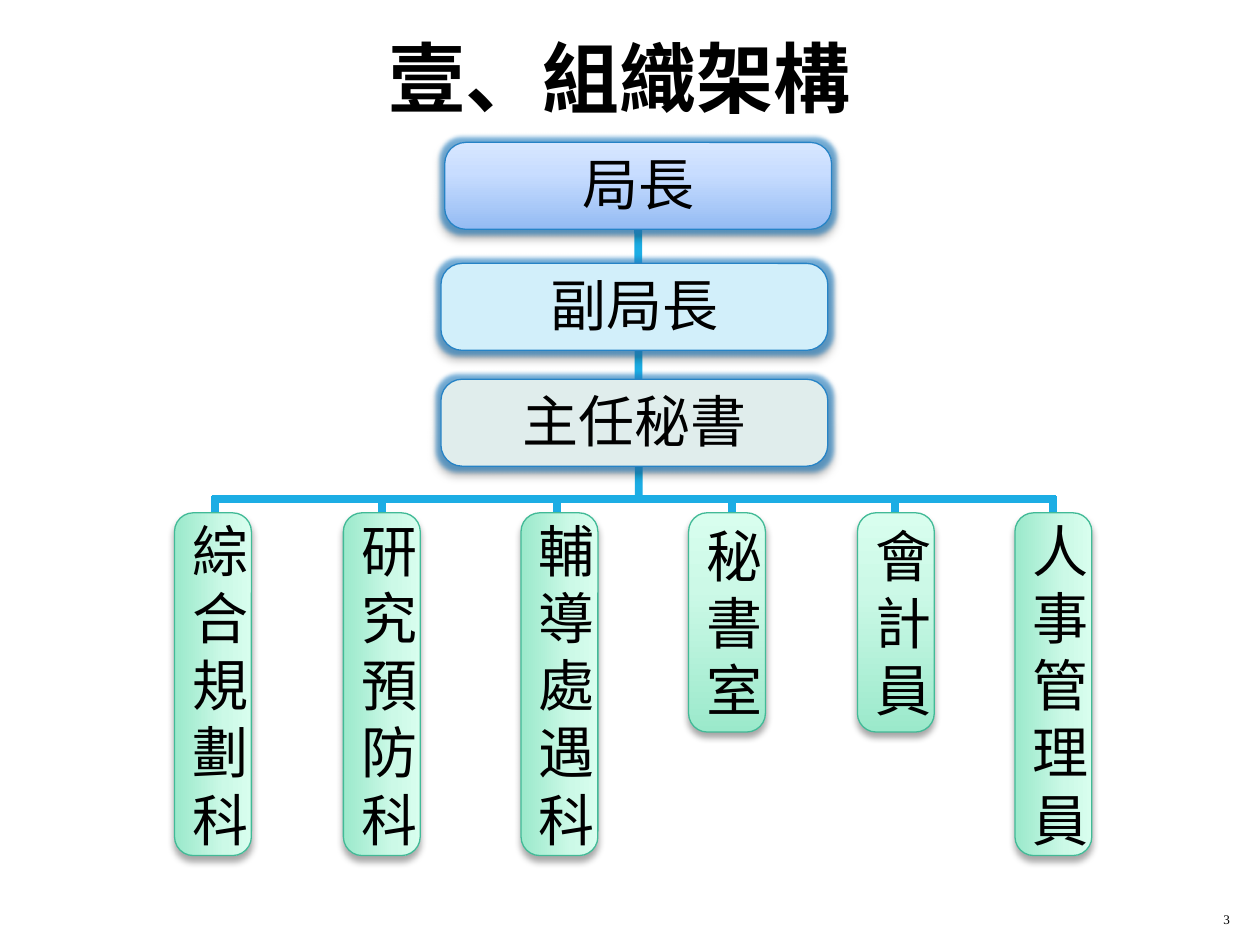
import pptx
import pptx.dml.color
import pptx.enum.shapes
import pptx.enum.text
import pptx.oxml
import pptx.oxml.ns
import pptx.util
from pptx.util import Inches, Pt

RGBColor = pptx.dml.color.RGBColor
ANCHOR = pptx.enum.text.MSO_ANCHOR
ALIGN = pptx.enum.text.PP_ALIGN

BLACK = RGBColor(0x00, 0x00, 0x00)
CYAN = RGBColor(0x1C, 0xAD, 0xE4)
BLUE = RGBColor(0x26, 0x83, 0xC6)
GREEN = RGBColor(0x42, 0xBA, 0x97)
PALE_CYAN = RGBColor(0xD2, 0xEF, 0xFA)
PALE_GREY = RGBColor(0xE0, 0xED, 0xEC)
BLUE_FADE = [(0, RGBColor(0x94, 0xBB, 0xF3)), (65, RGBColor(0xC8, 0xDD, 0xFF)),
             (100, RGBColor(0xD8, 0xE7, 0xFF))]
GREEN_FADE = [(0, RGBColor(0x9B, 0xE9, 0xCB)), (65, RGBColor(0xCC, 0xF9, 0xE7)),
              (100, RGBColor(0xD8, 0xFE, 0xEE))]

TITLE = "壹、組織架構"
PAGE_NUMBER = "3"
# name, left, top, fill
LEADERS = [
    ("局長", 3.53, 1.13, BLUE_FADE),
    ("副局長", 3.5, 2.09, PALE_CYAN),
    ("主任秘書", 3.5, 3.01, PALE_GREY),
]
# name, centre of the box, centre of its drop line
UNITS = [
    ("綜合規劃科", 1.69, 1.71),
    ("研究預防科", 3.03, 3.03),
    ("輔導處遇科", 4.44, 4.42),
    ("秘書室", 5.77, 5.81),
    ("會計員", 7.11, 7.1),
    ("人事管理員", 8.36, 8.36),
]
LEADER_SIZE = (3.07, 0.69)
UNIT_TOP, UNIT_WIDTH = 4.07, 0.61
SHORT_UNIT, LONG_UNIT = 1.74, 2.72
BAR_Y, BAR_LEFT, BAR_RIGHT = 3.96, 1.68, 8.38
DROP_TOP, DROP_LENGTH = 3.94, 0.34
TRUNK_X = 5.07

NS = pptx.oxml.ns.nsdecls("a")


def write(shape, text, size=32, bold=False, align=ALIGN.CENTER, anchor=ANCHOR.MIDDLE):
    frame = shape.text_frame
    frame.word_wrap = True
    frame.vertical_anchor = anchor
    paragraph = frame.paragraphs[0]
    paragraph.alignment = align
    run = paragraph.add_run()
    run.text = text
    run.font.name = "Times New Roman"
    run.font.size = Pt(size)
    run.font.bold = bold
    run.font.color.rgb = BLACK


def add_effects(shape, glow=None):
    """Give a soft shadow below the shape and, if a colour is given, a glow."""
    halo = ""
    if glow is not None:
        halo = (f'<a:glow rad="{Pt(5)}"><a:srgbClr val="{glow}">'
                '<a:alpha val="60000"/></a:srgbClr></a:glow>')
    shape.shadow.inherit = False
    properties = shape._element.spPr
    properties.remove(properties.find(pptx.oxml.ns.qn("a:effectLst")))
    properties.append(pptx.oxml.parse_xml(
        f'<a:effectLst {NS}>{halo}<a:outerShdw blurRad="{Pt(4)}" dist="{Pt(3)}" '
        'dir="5400000" rotWithShape="0"><a:srgbClr val="000000">'
        '<a:alpha val="35000"/></a:srgbClr></a:outerShdw></a:effectLst>'))


def fill_with(shape, fill):
    """Fill with one colour, or with a list of stops running upwards."""
    if isinstance(fill, RGBColor):
        shape.fill.solid()
        shape.fill.fore_color.rgb = fill
        return
    shape.fill.gradient()
    shape.fill.gradient_angle = 90
    stops = shape._element.spPr.find(".//" + pptx.oxml.ns.qn("a:gsLst"))
    for stop in list(stops):
        stops.remove(stop)
    for position, colour in fill:
        stops.append(pptx.oxml.parse_xml(
            f'<a:gs {NS} pos="{position * 1000}"><a:srgbClr val="{colour}"/></a:gs>'))


def add_box(slide, left, top, width, height, fill, outline, glow=None):
    box = slide.shapes.add_shape(
        pptx.enum.shapes.MSO_SHAPE.ROUNDED_RECTANGLE,
        Inches(left), Inches(top), Inches(width), Inches(height))
    box.adjustments[0] = 0.244
    fill_with(box, fill)
    box.line.color.rgb = outline
    box.line.width = Pt(0.75)
    add_effects(box, glow)
    return box


def add_unit(slide, name, centre):
    """Long names stand in a box turned by 90 degrees with its text turned back."""
    if len(name) <= 3:
        box = add_box(slide, centre - UNIT_WIDTH / 2, UNIT_TOP, UNIT_WIDTH,
                      SHORT_UNIT, GREEN_FADE, GREEN)
    else:
        middle = UNIT_TOP + LONG_UNIT / 2
        box = add_box(slide, centre - LONG_UNIT / 2, middle - UNIT_WIDTH / 2,
                      LONG_UNIT, UNIT_WIDTH, GREEN_FADE, GREEN)
        box.rotation = 90
        box.text_frame._txBody.bodyPr.set("vert", "vert270")
    write(box, name)


def add_line(slide, x1, y1, x2, y2):
    line = slide.shapes.add_connector(
        pptx.enum.shapes.MSO_CONNECTOR.STRAIGHT,
        Inches(x1), Inches(y1), Inches(x2), Inches(y2))
    line.line.color.rgb = CYAN
    line.line.width = Pt(4.5)
    line._element.spPr.append(pptx.oxml.parse_xml(f"<a:effectLst {NS}/>"))
    return line


def add_text(slide, left, top, width, height, text, **style):
    box = slide.shapes.add_textbox(
        Inches(left), Inches(top), Inches(width), Inches(height))
    write(box, text, **style)


def main():
    deck = pptx.Presentation()
    deck.slide_width, deck.slide_height = Inches(10), Inches(7.5)
    slide = deck.slides.add_slide(deck.slide_layouts[6])

    trunk = add_line(slide, TRUNK_X, 1.82, TRUNK_X, BAR_Y)
    for _, _, drop_x in UNITS:
        add_line(slide, drop_x, DROP_TOP, drop_x, DROP_TOP + DROP_LENGTH)

    leaders = []
    for name, left, top, fill in LEADERS:
        box = add_box(slide, left, top, *LEADER_SIZE, fill, BLUE, glow=BLUE)
        write(box, name, anchor=ANCHOR.BOTTOM)
        leaders.append(box)
    trunk.begin_connect(leaders[0], 2)

    for name, centre, _ in UNITS:
        add_unit(slide, name, centre)
    add_line(slide, BAR_LEFT, BAR_Y, BAR_RIGHT, BAR_Y)

    add_text(slide, 0.42, 0.14, 9, 0.94, TITLE, size=44, bold=True)
    add_text(slide, 9.46, 7.01, 0.4, 0.4, PAGE_NUMBER, size=7.5,
             align=ALIGN.RIGHT, anchor=ANCHOR.BOTTOM)
    deck.save("out.pptx")


if __name__ == "__main__":
    main()
